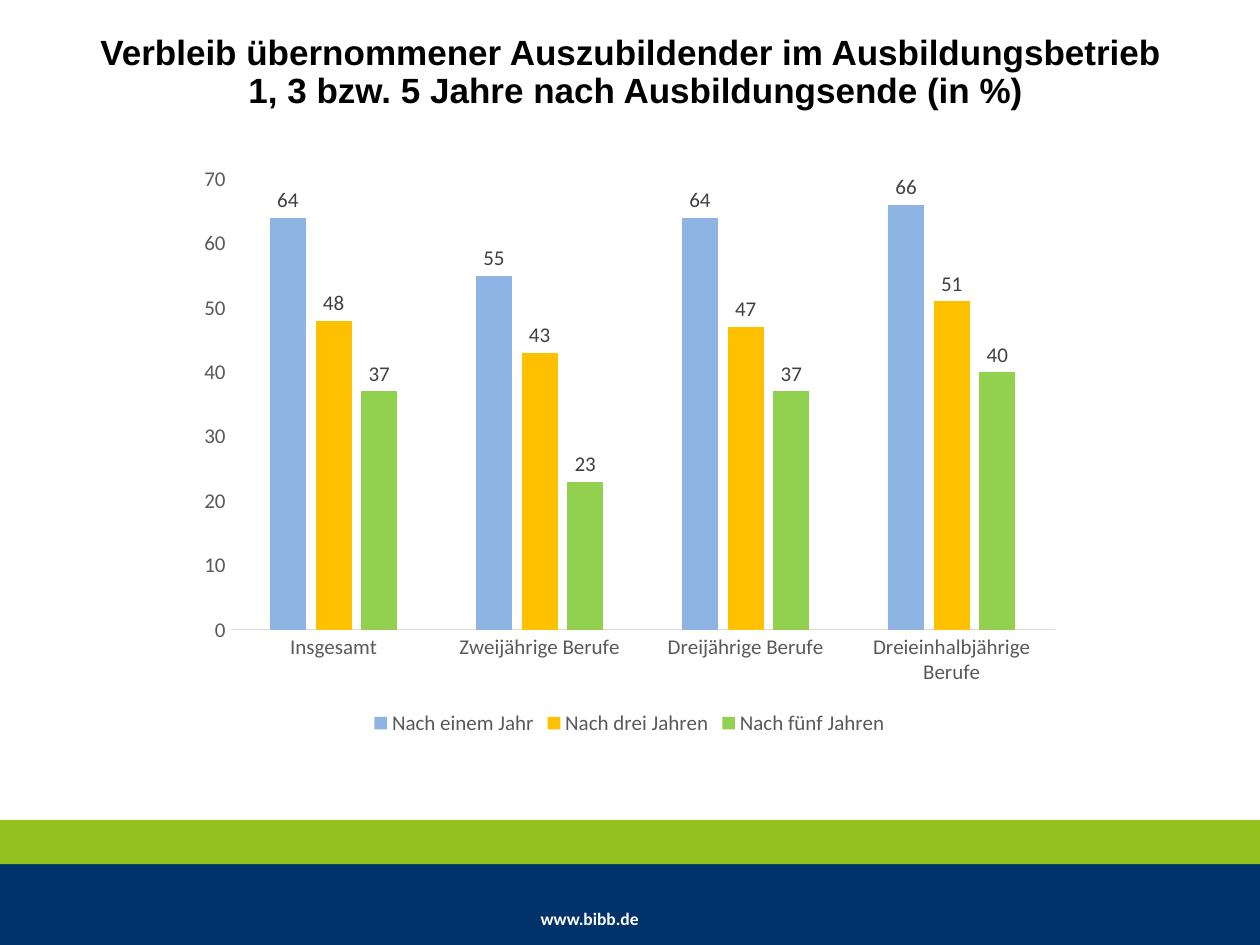
from dataclasses import dataclass

from pptx import Presentation
from pptx import util as u
from pptx.chart import data
from pptx.dml import color
from pptx.enum import chart as charts, shapes, text


@dataclass(frozen=True)
class Theme:
    navy: str = "003369"
    green: str = "95C11F"
    white: str = "FFFFFF"
    black: str = "000000"
    axis_text: str = "595959"
    label_text: str = "404040"
    axis_line: str = "D9D9D9"
    bars: tuple = ("8EB4E3", "FFC000", "92D050")
    title_font: str = "Arial"
    body_font: str = "Calibri"
    title_size: int = 20
    chart_size: int = 12
    footer_size: int = 10


THEME = Theme()
SLIDE_WIDTH, SLIDE_HEIGHT = 25.4, 19.05
TITLE = ("Verbleib übernommener Auszubildender im Ausbildungsbetrieb \v"
         "1, 3 bzw. 5 Jahre nach Ausbildungsende (in %)")
OCCUPATIONS = ["Insgesamt", "Zweijährige Berufe", "Dreijährige Berufe",
               "Dreieinhalbjährige Berufe"]
RETENTION = {
    "Nach einem Jahr": (64, 55, 64, 66),
    "Nach drei Jahren": (48, 43, 47, 51),
    "Nach fünf Jahren": (37, 23, 37, 40),
}


def rgb(value):
    return color.RGBColor.from_string(value)


def set_font(font, name, size, shade, bold=False):
    font.name = name
    font.size = u.Pt(size)
    font.bold = bold
    font.color.rgb = rgb(shade)


def set_chart_font(font, shade):
    set_font(font, THEME.body_font, THEME.chart_size, shade)


def add_band(page, top, height, shade):
    band = page.shapes.add_shape(shapes.MSO_SHAPE.RECTANGLE, 0, u.Cm(top),
                                 u.Cm(SLIDE_WIDTH), u.Cm(height))
    band.fill.solid()
    band.fill.fore_color.rgb = rgb(shade)
    band.line.fill.background()
    band.shadow.inherit = False


def add_footer(page, wording):
    box = page.shapes.add_textbox(u.Cm(10.9), u.Cm(18.31), u.Cm(2.6), u.Cm(0.43))
    frame = box.text_frame
    frame.margin_left = frame.margin_right = 0
    frame.margin_top = frame.margin_bottom = 0
    frame.word_wrap = True
    para = frame.paragraphs[0]
    para.text = wording
    set_font(para.font, THEME.body_font, THEME.footer_size, THEME.white, bold=True)


def fill_title(page, wording):
    title = page.shapes.title
    title.left, title.top = u.Cm(1.32), u.Cm(0.58)
    title.width, title.height = u.Cm(23), u.Cm(1.8)
    frame = title.text_frame
    frame.auto_size = text.MSO_AUTO_SIZE.NONE
    frame.vertical_anchor = text.MSO_ANCHOR.TOP
    frame.word_wrap = True
    para = frame.paragraphs[0]
    para.text = wording
    para.alignment = text.PP_ALIGN.CENTER
    para.line_spacing = 0.9
    set_font(para.font, THEME.title_font, THEME.title_size, THEME.black, bold=True)


def style_axes(chart):
    for axis in (chart.category_axis, chart.value_axis):
        axis.has_major_gridlines = False
        axis.major_tick_mark = charts.XL_TICK_MARK.NONE
        axis.minor_tick_mark = charts.XL_TICK_MARK.NONE
        set_chart_font(axis.tick_labels.font, THEME.axis_text)
    chart.category_axis.format.line.color.rgb = rgb(THEME.axis_line)
    chart.category_axis.format.line.width = u.Pt(0.75)
    chart.value_axis.format.line.fill.background()
    chart.value_axis.minimum_scale = 0
    chart.value_axis.maximum_scale = 70
    chart.value_axis.major_unit = 10


def style_series(series, shade):
    series.format.fill.solid()
    series.format.fill.fore_color.rgb = rgb(shade)
    series.invert_if_negative = False
    labels = series.data_labels
    labels.show_value = True
    labels.position = charts.XL_LABEL_POSITION.OUTSIDE_END
    set_chart_font(labels.font, THEME.label_text)


def add_retention_chart(page):
    table = data.CategoryChartData(number_format="0")
    table.categories = OCCUPATIONS
    for name, values in RETENTION.items():
        table.add_series(name, values)
    chart = page.shapes.add_chart(
        charts.XL_CHART_TYPE.COLUMN_CLUSTERED, u.Cm(3.76), u.Cm(3.12),
        u.Cm(17.86), u.Cm(11.81), table).chart
    chart.has_title = False
    set_chart_font(chart.font, THEME.axis_text)
    style_axes(chart)
    plot = chart.plots[0]
    plot.gap_width = 219
    plot.overlap = -27
    plot.vary_by_categories = False
    for series, shade in zip(plot.series, THEME.bars):
        style_series(series, shade)
    chart.has_legend = True
    chart.legend.position = charts.XL_LEGEND_POSITION.BOTTOM
    chart.legend.include_in_layout = False
    set_chart_font(chart.legend.font, THEME.axis_text)


def main():
    deck = Presentation()
    deck.slide_width, deck.slide_height = u.Cm(SLIDE_WIDTH), u.Cm(SLIDE_HEIGHT)
    page = deck.slides.add_slide(deck.slide_layouts.get_by_name("Title Only"))
    add_band(page, 17.42, 1.63, THEME.navy)
    add_band(page, 16.53, 0.89, THEME.green)
    add_footer(page, "www.bibb.de")
    fill_title(page, TITLE)
    add_retention_chart(page)
    deck.save("out.pptx")


if __name__ == "__main__":
    main()
